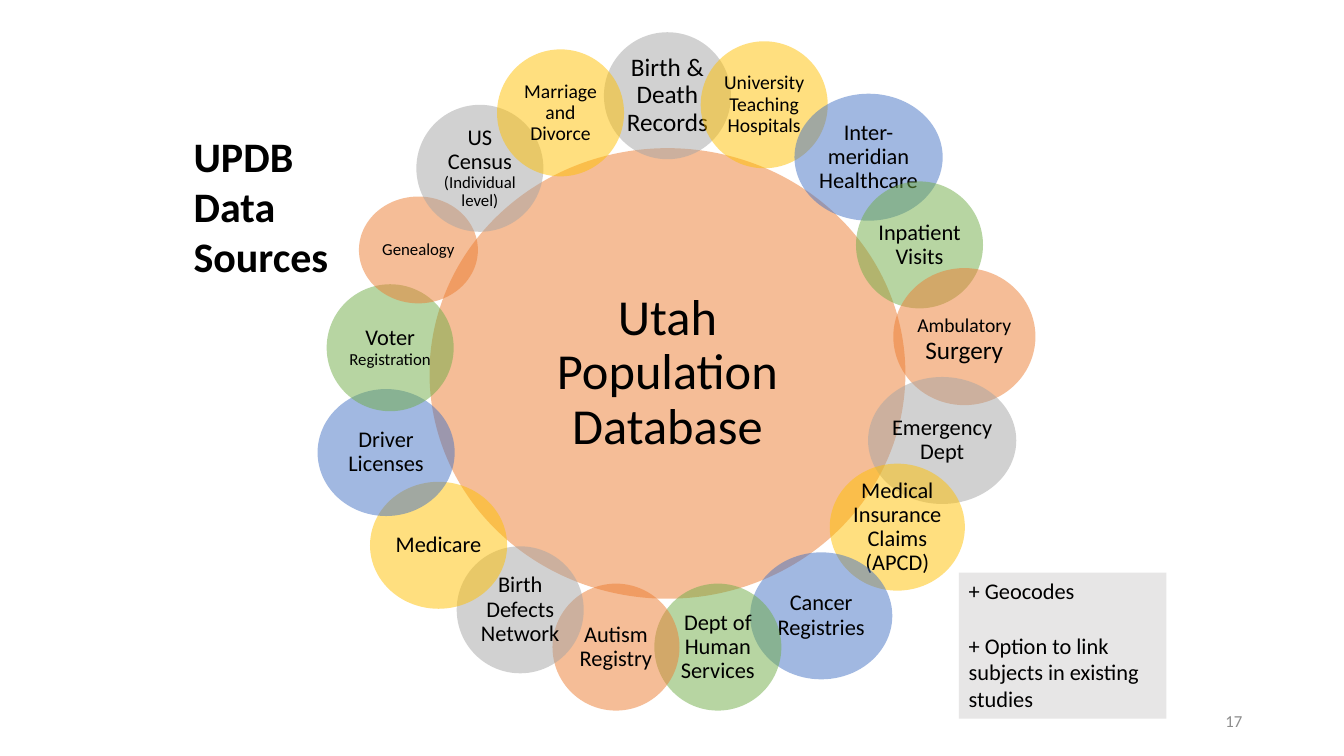
from lxml import etree
from pptx import Presentation
from pptx.dml.color import RGBColor
from pptx.enum.shapes import MSO_SHAPE
from pptx.enum.text import MSO_ANCHOR, MSO_AUTO_SIZE, PP_ALIGN
from pptx.oxml.ns import qn
from pptx.util import Inches, Pt

OVAL, RECTANGLE = MSO_SHAPE.OVAL, MSO_SHAPE.RECTANGLE
TOP, MIDDLE = MSO_ANCHOR.TOP, MSO_ANCHOR.MIDDLE
LEFT, CENTER, RIGHT = PP_ALIGN.LEFT, PP_ALIGN.CENTER, PP_ALIGN.RIGHT
TITLE_ONLY = 5
COLORS = {
    "grey": "A5A5A5", "gold": "FFC000", "blue": "4472C4", "green": "70AD47",
    "orange": "ED7D31", "note": "E7E6E6", "text": "000000", "number": "8C8C8C",
}
SOURCE_COLORS = ["grey", "gold", "blue", "green", "orange"]

presentation = Presentation()
presentation.slide_width = Inches(13.33)
presentation.slide_height = Inches(7.5)
slide = presentation.slides.add_slide(presentation.slide_layouts[TITLE_ONLY])


def format_paragraph(paragraph, size, alignment, color="text"):
    paragraph.alignment = alignment
    paragraph.font.name = "Calibri"
    paragraph.font.size = Pt(size)
    paragraph.font.color.rgb = RGBColor.from_string(COLORS[color])


def add_circle(position, color, inset, parts):
    """Add a half-transparent ellipse labelled with (text, size) parts."""
    circle = slide.shapes.add_shape(OVAL, *map(Inches, position))
    circle.shadow.inherit = False
    circle.line.fill.background()
    circle.fill.solid()
    circle.fill.fore_color.rgb = RGBColor.from_string(COLORS[color])
    fill_color = circle._element.spPr.find(qn("a:solidFill"))[0]
    etree.SubElement(fill_color, qn("a:alpha")).set("val", "50000")

    frame = circle.text_frame
    frame.word_wrap = True
    frame.vertical_anchor = MIDDLE
    frame.margin_left = frame.margin_right = Inches(inset)
    frame.margin_top = frame.margin_bottom = Inches(inset)
    paragraph = frame.paragraphs[0]
    format_paragraph(paragraph, parts[0][1], CENTER)
    paragraph.line_spacing = 0.9
    for text, size in parts:
        run = paragraph.add_run()
        run.text = text
        if len(parts) > 1:
            run.font.size = Pt(size)


# Title
title = slide.shapes.title
title.left, title.top = Inches(1.82), Inches(1.24)
title.width, title.height = Inches(2.01), Inches(1.62)
title.text = "UPDB Data Sources"
title.text_frame.word_wrap = True
title.text_frame.auto_size = MSO_AUTO_SIZE.NONE
title.text_frame.vertical_anchor = TOP
format_paragraph(title.text_frame.paragraphs[0], 30, LEFT)
title.text_frame.paragraphs[0].font.bold = True

# Central database
add_circle((4.26, 1.47, 4.72, 4.47), "orange", 0.05, [("Utah Population Database", 36)])

# Ring of data sources, clockwise from the top; colours repeat every five
sources = [
    ((5.99, 0.32, 1.26, 1.26), [("Birth & Death Records", 18)]),
    ((6.95, 0.41, 1.26, 1.26), [("University Teaching Hospitals", 14)]),
    ((7.88, 0.93, 1.47, 1.26), [("Inter-meridian Healthcare", 16)]),
    ((8.49, 1.80, 1.26, 1.26), [("Inpatient Visits", 16)]),
    ((8.86, 2.66, 1.41, 1.36), [("Ambulatory", 14), (" ", 20), ("Surgery", 18)]),
    ((8.61, 3.74, 1.47, 1.26), [("Emergency Dept", 16)]),
    ((8.23, 4.60, 1.34, 1.26), [("Medical Insurance Claims (APCD)", 16)]),
    ((7.44, 5.48, 1.41, 1.26), [("Cancer Registries", 16)]),
    ((6.49, 5.79, 1.26, 1.26), [("Dept of Human Services", 16)]),
    ((5.48, 5.79, 1.26, 1.26), [("Autism Registry", 16)]),
    ((4.53, 5.42, 1.26, 1.26), [("Birth Defects Network", 16)]),
    ((3.67, 4.78, 1.36, 1.26), [("Medicare", 16)]),
    ((3.15, 3.86, 1.36, 1.26), [("Driver Licenses", 16)]),
    ((3.24, 2.82, 1.26, 1.26), [("Voter ", 16), ("Registration", 12)]),
    ((3.56, 1.95, 1.18, 1.06), [("Genealogy", 12)]),
    ((4.13, 1.04, 1.26, 1.26), [("US Census ", 16), ("(Individual level)", 12)]),
    ((4.93, 0.49, 1.26, 1.26), [("Marriage and Divorce", 14)]),
]
for index, (position, parts) in enumerate(sources):
    add_circle(position, SOURCE_COLORS[index % len(SOURCE_COLORS)], 0.02, parts)

# Note on further options
note = slide.shapes.add_shape(
    RECTANGLE, Inches(9.51), Inches(5.68), Inches(2.06), Inches(1.45))
note.shadow.inherit = False
note.line.fill.background()
note.fill.solid()
note.fill.fore_color.rgb = RGBColor.from_string(COLORS["note"])
note.text_frame.word_wrap = True
note.text_frame.vertical_anchor = TOP
note.text_frame.text = "+ Geocodes\n+ Option to link subjects in existing studies"
for paragraph in note.text_frame.paragraphs:
    format_paragraph(paragraph, 16, LEFT)
note.text_frame.paragraphs[1].space_before = Pt(19.5)

# Slide number
number = slide.shapes.add_textbox(Inches(9.42), Inches(6.95), Inches(3), Inches(0.4))
number.text_frame.word_wrap = True
number.text_frame.vertical_anchor = MIDDLE
number.text_frame.text = "17"
format_paragraph(number.text_frame.paragraphs[0], 12, RIGHT, "number")

presentation.save("out.pptx")
